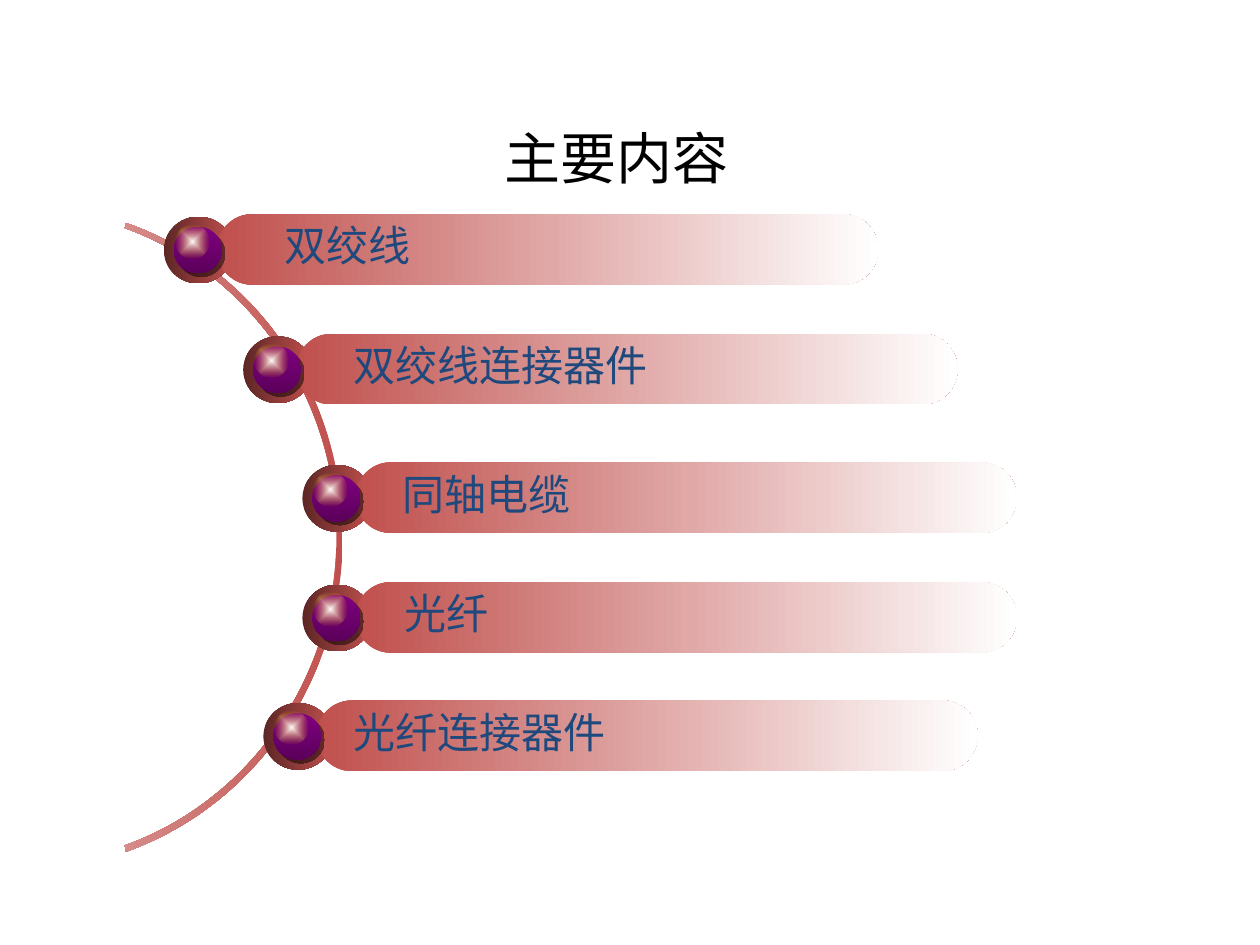
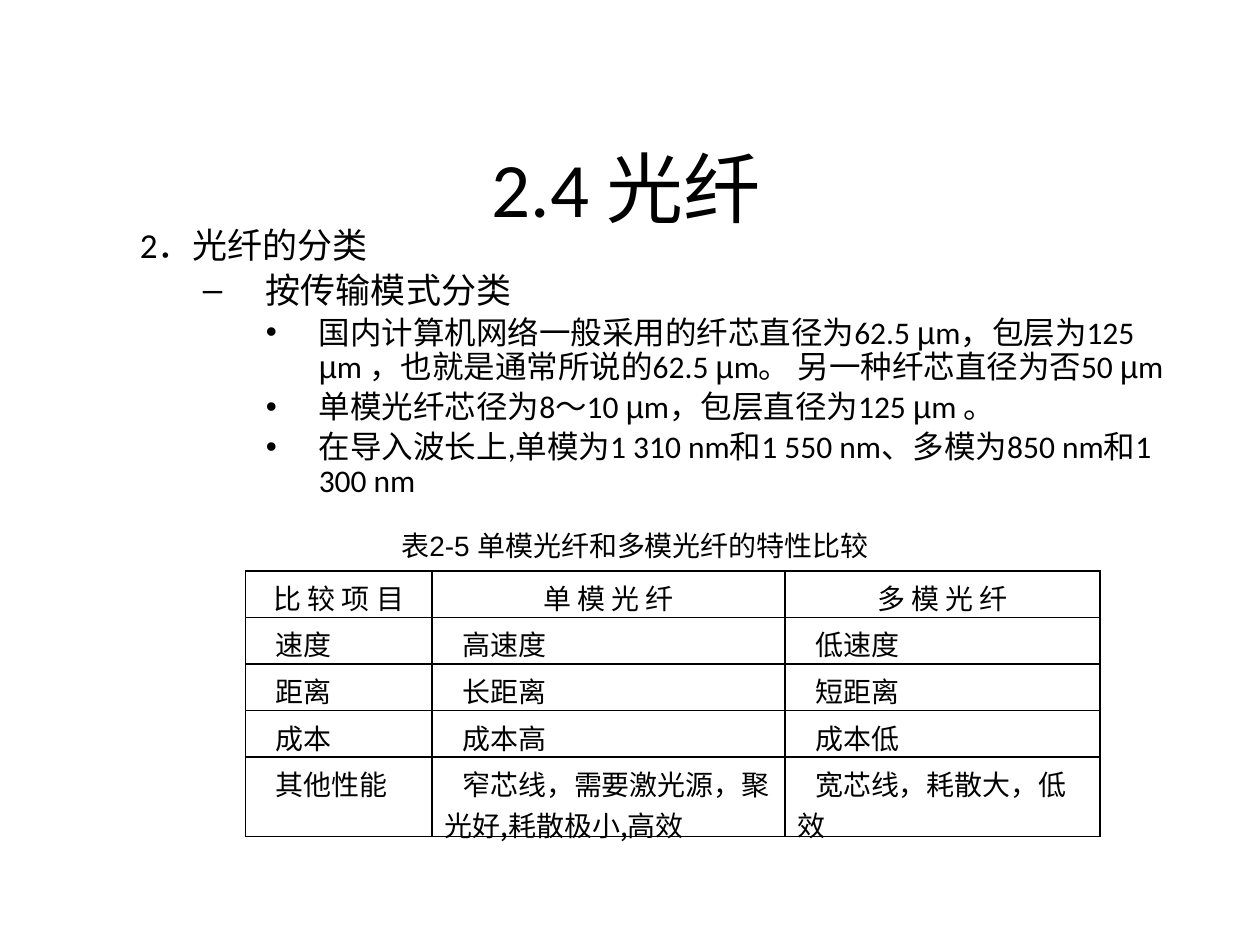
import math
from lxml import etree
from pptx import Presentation
from pptx import util as u
from pptx.dml.color import RGBColor
from pptx.enum import shapes, text
from pptx.oxml.ns import qn

COLOURS = {
    "black": "000000", "white": "FFFFFF", "label": "1F497D", "red": "C0504D",
    "maroon": "5C2625", "purple": "800080", "plum": "5B005B", "amber": "E9940B",
}
FONT, LABEL_FONT, TABLE_FONT = "Calibri", "Arial", "Noto Sans CJK SC"

AGENDA_TITLE = "主要内容"
AGENDA = [
    ("双绞线", 1.30, 1.70, 2.16),
    ("双绞线连接器件", 1.93, 2.65, 2.71),
    ("同轴电缆", 2.40, 3.67, 3.10),
    ("光纤", 2.40, 4.62, 3.11),
    ("光纤连接器件", 2.09, 5.56, 2.71),
]
ARC_BOX = (-2.46, 1.72, 5.28, 5.08)
ARC_START = (0.99, 1.81)
ARC_INNER = [
    (1.99, 2.17), (2.67, 3.16), (2.67, 4.26),
    (2.67, 5.37), (1.99, 6.35), (0.99, 6.71),
]
ARC_OUTER_START = (1.0, 6.76)
ARC_OUTER = [
    (2.03, 6.39), (2.72, 5.39), (2.72, 4.26),
    (2.72, 3.13), (2.03, 2.13), (1.0, 1.77),
]

FIBRE_TITLE = "2.4 光纤"
FIBRE_POINTS = [
    (0, "2．光纤的分类"),
    (1, "按传输模式分类"),
    (2, "国内计算机网络一般采用的纤芯直径为62.5 µm，包层为125 µm ，也就是通常所说的62.5 µm。 另一种纤芯直径为否50 µm"),
    (2, "单模光纤芯径为8～10 µm，包层直径为125 µm 。"),
    (2, "在导入波长上,单模为1 310 nm和1 550 nm、多模为850 nm和1 300 nm"),
]
LEVELS = [
    {"left": 0.5, "hang": 0.5, "bullet": None, "size": 20, "before": 0},
    {"left": 1.0, "hang": 0.5, "bullet": "–", "size": 20, "before": 4},
    {"left": 1.42, "hang": 0.42, "bullet": "•", "size": 18, "before": 3.6},
]
CAPTION = "表2-5 单模光纤和多模光纤的特性比较"
COMPARISON = [
    ("比 较 项 目", "单 模 光 纤", "多 模 光 纤"),
    ("速度", "高速度", "低速度"),
    ("距离", "长距离", "短距离"),
    ("成本", "成本高", "成本低"),
    ("其他性能", "窄芯线，需要激光源，聚光好,耗散极小,高效", "宽芯线，耗散大，低效"),
]
COLUMN_WIDTHS = (1.48, 2.8, 2.5)
ROW_HEIGHTS = (0.37, 0.37, 0.37, 0.37, 0.63)


def inches(*lengths):
    return [u.Inches(length) for length in lengths]


def rgb(name):
    return RGBColor.from_string(COLOURS[name])


def apply(target, values):
    for name, value in values.items():
        setattr(target, name, value)


def style(font, size, colour="black", name=FONT):
    apply(font, {"size": u.Pt(size), "name": name})
    font.color.rgb = rgb(colour)


def add_xml(parent, tag, **attributes):
    return etree.SubElement(parent, qn(tag), attributes)


def place(shape, box):
    apply(shape, dict(zip(("left", "top", "width", "height"), inches(*box))))


def set_title(slide, words, box, size):
    title = slide.shapes.title
    place(title, box)
    frame = title.text_frame
    frame.text = words
    apply(frame, {"vertical_anchor": text.MSO_ANCHOR.MIDDLE, "auto_size": text.MSO_AUTO_SIZE.NONE})
    frame.paragraphs[0].alignment = text.PP_ALIGN.CENTER
    style(frame.paragraphs[0].font, size)


def add_label(slide, words, box, size, colour, align):
    frame = slide.shapes.add_textbox(*inches(*box)).text_frame
    apply(frame, {"word_wrap": True, "vertical_anchor": text.MSO_ANCHOR.MIDDLE})
    paragraph = frame.paragraphs[0]
    paragraph.text = words
    paragraph.alignment = align
    style(paragraph.font, size, colour, LABEL_FONT)


def paint(shape, start, end, angle=0):
    shape.shadow.inherit = False
    shape.line.fill.background()
    shape.fill.gradient()
    shape.fill.gradient_angle = angle
    for stop, colour in zip(shape.fill.gradient_stops, (start, end)):
        stop.color.rgb = rgb(colour)


def bend(lines):
    for first in range(0, len(lines), 3):
        curve = lines[first]
        curve.tag = qn("a:cubicBezTo")
        for line in lines[first + 1:first + 3]:
            curve.append(line[0])
            line.getparent().remove(line)


def add_arc(slide):
    left, top, width, height = ARC_BOX
    centre_x, centre_y = left + width / 2, top + height / 2

    def turn(point):
        x, y = point
        return inches(centre_x + y - centre_y, centre_y - x + centre_x)

    builder = slide.shapes.build_freeform(*inches(left, top))
    builder.move_to(*inches(left + width, top + height))
    builder.move_to(*turn(ARC_START))
    outline = ARC_INNER + [ARC_OUTER_START] + ARC_OUTER
    builder.add_line_segments([turn(point) for point in outline], close=True)
    arc = builder.convert_to_shape()
    for corner in list(arc._element.iter(qn("a:moveTo")))[:2]:
        corner.getparent().remove(corner)
    lines = list(arc._element.iter(qn("a:lnTo")))
    bend(lines[:len(ARC_INNER)])
    bend(lines[-len(ARC_OUTER):])
    arc.rotation = 90
    paint(arc, "red", "white", 270)


def add_shadow(shape):
    effects = shape._element.spPr.find(qn("a:effectLst"))
    shadow = add_xml(effects, "a:outerShdw", dist=str(u.Pt(2.8)), dir="2700000",
                     algn="ctr", rotWithShape="0")
    colour = add_xml(shadow, "a:srgbClr", val=COLOURS["black"])
    add_xml(colour, "a:alpha", val="50000")


def make_glow(shape):
    gradient = shape._element.spPr.find(qn("a:gradFill"))
    gradient.remove(gradient.find(qn("a:lin")))
    path = add_xml(gradient, "a:path", path="shape")
    add_xml(path, "a:fillToRect", l="50000", t="50000", r="50000", b="50000")
    add_xml(gradient.findall(".//" + qn("a:srgbClr"))[-1], "a:alpha", val="0")


def add_agenda_item(slide, words, left, top, text_left):
    group = slide.shapes.add_group_shape()
    oval, rounded = shapes.MSO_SHAPE.OVAL, shapes.MSO_SHAPE.ROUNDED_RECTANGLE
    parts = [
        (oval, (0, 0.02, 0.55, 0.53), "maroon", "red", 0),
        (rounded, (0.42, 0, 5.25, 0.56), "red", "white", 0),
        (oval, (0.08, 0.1, 0.38, 0.37), "purple", "plum", 270),
        (oval, (0.09, 0.08, 0.27, 0.27), "white", "amber", 0),
    ]
    drawn = []
    for kind, (dx, dy, width, height), start, end, angle in parts:
        shape = group.shapes.add_shape(kind, *inches(left + dx, top + dy, width, height))
        paint(shape, start, end, angle)
        drawn.append(shape)
    ring, bar, pearl, glow = drawn
    bar.adjustments[0] = 0.5
    add_shadow(pearl)
    make_glow(glow)
    add_label(slide, words, (text_left, top + 0.07, 5.1, 0.35), 24, "label", text.PP_ALIGN.LEFT)


def add_points(slide):
    body = slide.placeholders[1]
    place(body, (1.01, 1.76, 8.58, 5.01))
    frame = body.text_frame
    frame.auto_size = text.MSO_AUTO_SIZE.NONE
    for index, (level, words) in enumerate(FIBRE_POINTS):
        look = LEVELS[level]
        paragraph = frame.add_paragraph() if index else frame.paragraphs[0]
        properties = paragraph._p.get_or_add_pPr()
        properties.set("marL", str(u.Inches(look["left"])))
        properties.set("indent", str(-u.Inches(look["hang"])))
        if look["bullet"]:
            add_xml(properties, "a:buChar", char=look["bullet"])
        else:
            add_xml(properties, "a:buNone")
        apply(paragraph, {
            "level": level, "line_spacing": 0.9, "space_before": u.Pt(look["before"]),
            "alignment": text.PP_ALIGN.LEFT if level == 2 else text.PP_ALIGN.JUSTIFY,
        })
        for order, piece in enumerate(words.split("µ")):
            for content, font in ((("µ", LABEL_FONT),) if order else ()) + ((piece, FONT),):
                run = paragraph.add_run()
                run.text = content
                style(run.font, look["size"], name=font)


def add_borders(cell, column):
    properties = cell._tc.get_or_add_tcPr()
    outer = {"L": column == 0, "R": column == len(COLUMN_WIDTHS) - 1}
    for side in "LRTB":
        width = 0.75 if outer.get(side) else 1
        line = add_xml(properties, "a:ln" + side, w=str(u.Pt(width)))
        add_xml(add_xml(line, "a:solidFill"), "a:srgbClr", val=COLOURS["black"])


def add_comparison(slide):
    frame = slide.shapes.add_table(
        len(COMPARISON), len(COLUMN_WIDTHS),
        *inches(1.95, 4.53, sum(COLUMN_WIDTHS), sum(ROW_HEIGHTS)))
    table = frame.table
    apply(table, {"first_row": False, "horz_banding": False})
    for column, width in zip(table.columns, COLUMN_WIDTHS):
        column.width = u.Inches(width)
    for row, height in zip(table.rows, ROW_HEIGHTS):
        row.height = u.Inches(height)
    for row_index, row in enumerate(COMPARISON):
        for column_index, words in enumerate(row):
            cell = table.cell(row_index, column_index)
            add_borders(cell, column_index)
            cell.fill.background()
            apply(cell, {"margin_top": u.Inches(0.05), "margin_bottom": 0})
            paragraph = cell.text_frame.paragraphs[0]
            paragraph.text = words
            if row_index:
                paragraph._p.get_or_add_pPr().set("indent", str(u.Inches(0.14)))
            else:
                paragraph.alignment = text.PP_ALIGN.CENTER
            style(paragraph.runs[0].font, 16, name=TABLE_FONT)


def main():
    presentation = Presentation()
    apply(presentation, {"slide_width": u.Inches(10), "slide_height": u.Inches(7.5)})
    layouts = presentation.slide_layouts

    agenda = presentation.slides.add_slide(layouts.get_by_name("Title Only"))
    add_arc(agenda)
    set_title(agenda, AGENDA_TITLE, (0.39, 0.62, 9, 1.25), 32)
    for item in AGENDA:
        add_agenda_item(agenda, *item)

    fibre = presentation.slides.add_slide(layouts.get_by_name("Title and Content"))
    set_title(fibre, FIBRE_TITLE, (0.47, 0.86, 9, 1.25), 44)
    add_points(fibre)
    add_label(fibre, CAPTION, (3.05, 4.01, 3.98, 0.63), 16, "black", text.PP_ALIGN.CENTER)
    add_comparison(fibre)

    presentation.save("out.pptx")


if __name__ == "__main__":
    main()
